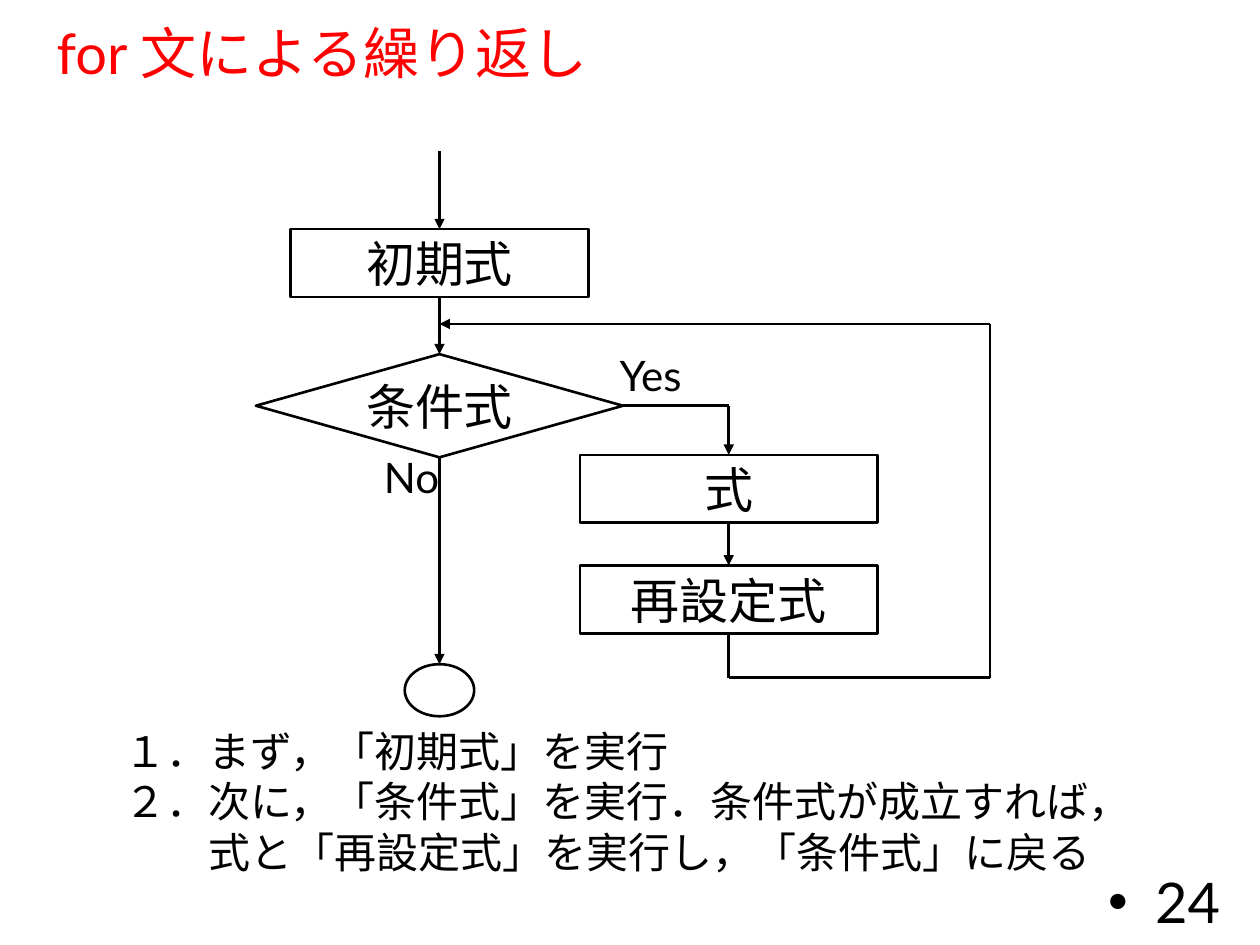
from lxml import etree
from pptx import Presentation
from pptx import util as u
from pptx.dml.color import RGBColor
from pptx.enum import shapes, text
from pptx.oxml.ns import qn

HUES = {"ink": "000000", "title": "FF0000"}
FONT = "Lato"
KIND = shapes.MSO_SHAPE
ALIGN = text.PP_ALIGN
TOP, BOTTOM, RIGHT = 0, 2, 3


def hue(name):
    return RGBColor.from_string(HUES[name])


def write(frame, lines, size=24, color="ink", align=ALIGN.LEFT, wrap=False,
          anchor=text.MSO_ANCHOR.TOP, bullet=None, space=None):
    """Fill a frame; each line is a string or a (string, left indent in cm) pair."""
    frame.auto_size = text.MSO_AUTO_SIZE.NONE
    frame.word_wrap = wrap
    frame.vertical_anchor = anchor
    for i, line in enumerate(lines):
        words, left = line if isinstance(line, tuple) else (line, 0)
        para = frame.paragraphs[0] if i == 0 else frame.add_paragraph()
        para.text = words
        para.alignment = align
        if space:
            para.line_spacing = space
        props = para._p.get_or_add_pPr()
        if left:
            props.set("marL", str(u.Cm(left)))
        if bullet:
            props.set("indent", str(-u.Cm(left)))
            etree.SubElement(props, qn("a:buFont")).set("typeface", "Arial")
            etree.SubElement(props, qn("a:buChar")).set("char", bullet)
        font = para.runs[0].font
        font.name, font.size = FONT, u.Pt(size)
        font.color.rgb = hue(color)


class Deck:
    """Holds the line style and the current slide."""

    def __init__(self, wide, high, line=1.5):
        self.prs = Presentation()
        self.prs.slide_width, self.prs.slide_height = u.Cm(wide), u.Cm(high)
        self.line = u.Pt(line)
        self.slide = self.prs.slides.add_slide(self.prs.slide_layouts[5])

    def title(self, words, x, y, w, h):
        box = self.slide.shapes.title
        box.left, box.top, box.width, box.height = map(u.Cm, (x, y, w, h))
        write(box.text_frame, [words], size=32, color="title", wrap=True,
              anchor=text.MSO_ANCHOR.MIDDLE, space=0.9)

    def label(self, lines, x, y, w, h, **style):
        box = self.slide.shapes.add_textbox(*map(u.Cm, (x, y, w, h)))
        write(box.text_frame, lines, **style)

    def node(self, kind, mid, y, w, h, words=None):
        """Outlined shape centred on the vertical axis mid."""
        box = self.slide.shapes.add_shape(
            kind, *map(u.Cm, (mid - w / 2, y, w, h)))
        box.shadow.inherit = False
        box.fill.background()
        box.line.color.rgb, box.line.width = hue("ink"), self.line
        if words:
            frame = box.text_frame
            frame.margin_left = frame.margin_right = 0
            frame.margin_top = frame.margin_bottom = 0
            write(frame, [words], size=28, align=ALIGN.CENTER,
                  anchor=text.MSO_ANCHOR.MIDDLE)
        return box

    def link(self, start, end, arrow=False):
        """Straight line; an end is an (x, y) point or a (shape, site) pair."""
        ends = [(0, 0) if hasattr(e[0], "shape_id") else e for e in (start, end)]
        wire = self.slide.shapes.add_connector(
            shapes.MSO_CONNECTOR.STRAIGHT, *(u.Cm(v) for e in ends for v in e))
        for e, join in ((start, wire.begin_connect), (end, wire.end_connect)):
            if hasattr(e[0], "shape_id"):
                join(*e)
        wire.line.color.rgb, wire.line.width = hue("ink"), self.line
        if arrow:
            tail = etree.SubElement(wire.line._get_or_add_ln(), qn("a:tailEnd"))
            tail.set("type", "triangle")
        etree.SubElement(wire._element.spPr, qn("a:effectLst"))


def main():
    deck = Deck(25.4, 19.05)
    deck.title("for 文による繰り返し", 0.89, 0.48, 23.5, 1.3)

    # Flowchart nodes on two vertical axes
    main_x, body_x, back_x = 8.86, 14.69, 19.96
    test_y, back_y, loop_y = 8.18, 6.53, 13.66
    size = (6, 1.37)
    init = deck.node(KIND.RECTANGLE, main_x, 4.62, *size, "初期式")
    test = deck.node(KIND.FLOWCHART_DECISION, main_x, test_y - 1.04, 7.4, 2.08,
                     "条件式")
    stop = deck.node(KIND.FLOWCHART_CONNECTOR, main_x, 13.39, 1.4, 1.05)
    body = deck.node(KIND.RECTANGLE, body_x, 9.17, *size, "式")
    step = deck.node(KIND.RECTANGLE, body_x, 11.4, *size, "再設定式")

    # Main flow
    deck.link((main_x, 3.05), (init, TOP), arrow=True)
    deck.link((init, BOTTOM), (test, TOP), arrow=True)
    deck.link((test, BOTTOM), (stop, TOP), arrow=True)

    # Loop body and return path
    deck.link((test, RIGHT), (body_x, test_y))
    deck.link((body_x, test_y), (body, TOP), arrow=True)
    deck.link((body, BOTTOM), (step, TOP), arrow=True)
    deck.link((step, BOTTOM), (body_x, loop_y))
    deck.link((body_x, loop_y), (back_x, loop_y))
    deck.link((back_x, loop_y), (back_x, back_y))
    deck.link((back_x, back_y), (main_x, back_y), arrow=True)

    # Branch labels
    deck.label(["Yes"], 12.24, 6.93, 1.9, 1.27)
    deck.label(["No"], 7.49, 8.97, 1.6, 1.27)

    # Explanation
    deck.label(["１．まず，「初期式」を実行",
                "２．次に，「条件式」を実行．条件式が成立すれば，",
                ("式と「再設定式」を実行し，「条件式」に戻る", 1.69)],
               2.26, 14.5, 21.03, 3.33)

    # Page number
    deck.label([("24", 0.95)], 19.13, 17.65, 5.72, 1.02, size=32, wrap=True,
               align=ALIGN.RIGHT, anchor=text.MSO_ANCHOR.MIDDLE, bullet="•")

    deck.prs.save("out.pptx")


if __name__ == "__main__":
    main()
